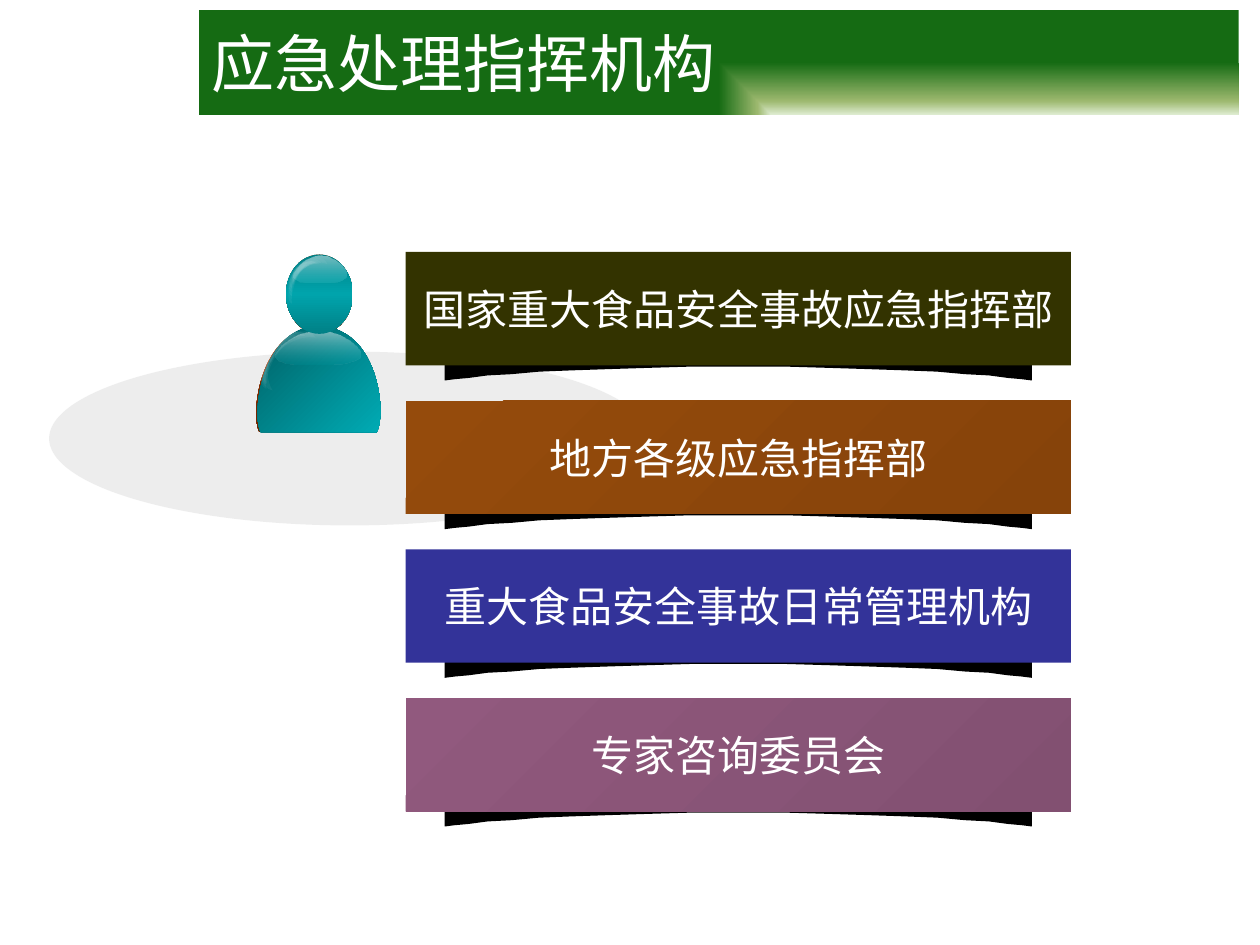
from lxml import etree
from pptx import Presentation
from pptx.dml.color import RGBColor
from pptx.enum.shapes import MSO_SHAPE
from pptx.enum.text import MSO_ANCHOR, PP_ALIGN
from pptx.oxml.ns import qn
from pptx.util import Inches, Pt

# Content: bar label and its fill stops (position, colour, modifiers)
TITLE = "应急处理指挥机构"
BARS = [
    ("国家重大食品安全事故应急指挥部", [(0, "333300", {})]),
    ("地方各级应急指挥部", [(0, "954B0C", {}), (100, "954B0C", {"shade": 78.43})]),
    ("重大食品安全事故日常管理机构", [(0, "333399", {})]),
    ("专家咨询委员会", [(0, "91597E", {}), (100, "91597E", {"shade": 78.43})]),
]

THEME = {
    "font": "Arial", "title_size": 36, "bar_size": 24, "text": "FFFFFF",
    "title": [(0, "DDEBCF", {}), (26, "9CB86E", {}), (100, "156B13", {})],
    "floor": [(0, "DDDDDD", {"alpha": 50})],
    "shadow": [(0, "000000", {})],
    "rim": [(0, "993300", {}), (100, "6D2400", {})],
    "body": [(0, "006065", {}), (100, "00ABB4", {})],
    "head": [(0, "008086", {}), (50, "00A4AC", {}), (100, "008086", {})],
    "body_gloss": [(0, "FFFFFF", {"alpha": 50}), (100, "009CA4", {"alpha": 18})],
    "head_gloss": [(0, "FFFFFF", {"alpha": 50}), (100, "59D3D9", {"alpha": 18})],
    "glint": [(0, "FFFFFF", {"alpha": 5})],
}

# Geometry in inches
BAR_LEFT, BAR_TOP, BAR_WIDTH, BAR_HEIGHT, BAR_PITCH = 3.22, 2, 5.28, 0.9, 1.18
HEAD = (2.27, 2.02, 0.53, 0.63)
# Right half of the curved shadow: offsets from the bar's centre and shadow's top
SHADOW_HALF = [
    (0, 0), (2.33, 0.11), (2.33, 0.43), (2.25, 0.42), (2.14, 0.41), (1.99, 0.39),
    (1.8, 0.38), (1.58, 0.36), (1.32, 0.35), (1.03, 0.34), (0.72, 0.33), (0.37, 0.32),
]
# Outline of a highlight, as fractions of its width and height
GLOSS = [
    (0.99, 0.6), (1, 0.72), (0.98, 0.8), (0.94, 0.86), (0.87, 0.92), (0.78, 0.97),
    (0.68, 0.99), (0.6, 1), (0.36, 1), (0.22, 0.99), (0.12, 0.95), (0.04, 0.88),
    (0, 0.77), (0.01, 0.64), (0.07, 0.45), (0.16, 0.28), (0.26, 0.14), (0.38, 0.05),
    (0.51, 0), (0.64, 0.04), (0.76, 0.14), (0.87, 0.3), (0.95, 0.47),
]
# Moon glints: left, top, width, height, rotation
GLINTS = [
    (2.42, 1.97, 0.09, 0.25, 250.7), (2.37, 1.99, 0.09, 0.26, 237.1),
    (2.36, 2.01, 0.09, 0.25, 232.1), (2.34, 2.02, 0.08, 0.28, 223.3),
    (2.35, 2.02, 0.09, 0.25, 228.1), (2.32, 2.04, 0.08, 0.28, 214.5),
    (2.31, 2.07, 0.08, 0.28, 209.6), (2.31, 2.06, 0.07, 0.35, 200.7),
    (2.23, 2.52, 0.13, 0.41, 240.4), (2.16, 2.55, 0.14, 0.4, 226.8),
    (2.16, 2.55, 0.12, 0.45, 221.9), (2.13, 2.6, 0.12, 0.45, 213),
    (2.12, 2.56, 0.12, 0.45, 217.8), (2.1, 2.6, 0.11, 0.45, 204.3),
    (2.08, 2.64, 0.11, 0.44, 199.3), (2.06, 2.71, 0.14, 0.38, 190.5),
]


def add_color(parent, color, modifiers):
    node = etree.SubElement(parent, qn("a:srgbClr"), val=color)
    for name, percent in modifiers.items():
        etree.SubElement(node, qn(f"a:{name}"), val=str(round(percent * 1000)))


def paint(shape, stops, angle=90, corner=False):
    """Fill with one colour, a linear gradient, or one growing from a corner."""
    shape.shadow.inherit = False
    shape.line.fill.background()
    shape.fill.solid()
    solid = shape._element.spPr.find(qn("a:solidFill"))
    if len(stops) == 1:
        add_color(solid, *stops[0][1:])
        return shape
    gradient = etree.Element(qn("a:gradFill"), rotWithShape="1")
    stop_list = etree.SubElement(gradient, qn("a:gsLst"))
    for position, color, modifiers in stops:
        stop = etree.SubElement(stop_list, qn("a:gs"), pos=str(position * 1000))
        add_color(stop, color, modifiers)
    if corner:
        route = etree.SubElement(gradient, qn("a:path"), path="rect")
        etree.SubElement(route, qn("a:fillToRect"), l="100000", t="100000")
    else:
        etree.SubElement(gradient, qn("a:lin"), ang=str(angle * 60000), scaled="0")
    solid.getparent().replace(solid, gradient)
    return shape


def add_preset(shapes, kind, place, stops, **options):
    shape = shapes.add_shape(kind, *map(Inches, place))
    return paint(shape, stops, **options)


def add_outline(shapes, points, stops, **options):
    corners = [(Inches(x), Inches(y)) for x, y in points]
    builder = shapes.build_freeform(*corners[0])
    builder.add_line_segments(corners[1:], close=True)
    return paint(builder.convert_to_shape(), stops, **options)


def write(shape, text, size, align, wrap):
    frame = shape.text_frame
    frame.word_wrap = wrap
    frame.vertical_anchor = MSO_ANCHOR.MIDDLE
    para = frame.paragraphs[0]
    para.text = text
    para.alignment = align
    para.font.name = THEME["font"]
    para.font.size = Pt(size)
    para.font.color.rgb = RGBColor.from_string(THEME["text"])


def bezier(start, control_1, control_2, end, steps=24):
    for step in range(steps + 1):
        t = step / steps
        weights = ((1 - t) ** 3, 3 * t * (1 - t) ** 2, 3 * t * t * (1 - t), t ** 3)
        yield tuple(sum(w * value for w, value in zip(weights, axis))
                    for axis in zip(start, control_1, control_2, end))


def shoulders(x, y):
    """Outline of the torso, with the neck at x, y."""
    left = bezier((x, y), (x - 0.47, y - 0.02), (x - 0.56, 3.29), (x - 0.48, 3.43))
    right = bezier((x + 0.44, 3.43), (x + 0.52, 3.29), (x + 0.46, y + 0.03), (x, y))
    return [*left, *right]


def add_gloss(shapes, left, top, width, height, stops):
    points = [(left + width * x, top + height * y) for x, y in GLOSS]
    add_outline(shapes, points, stops)


deck = Presentation()
deck.slide_width, deck.slide_height = Inches(10), Inches(7.5)
page = deck.slides.add_slide(deck.slide_layouts[6])

# Title band and floor ellipse
band = add_preset(page.shapes, MSO_SHAPE.RECTANGLE, (1.58, 0.08, 8.25, 0.83),
                  THEME["title"], corner=True)
write(band, TITLE, THEME["title_size"], PP_ALIGN.LEFT, True)
add_preset(page.shapes, MSO_SHAPE.OVAL, (0.39, 2.79, 4.77, 1.38), THEME["floor"])

# Bars, each over its curved shadow
center = BAR_LEFT + BAR_WIDTH / 2
for row, (label, stops) in enumerate(BARS):
    top = BAR_TOP + row * BAR_PITCH
    group = page.shapes.add_group_shape().shapes
    half = [(dx, top + 0.59 + dy) for dx, dy in SHADOW_HALF]
    curve = [(center + dx, y) for dx, y in half]
    curve += [(center - dx, y) for dx, y in reversed(half[1:])]
    add_outline(group, curve, THEME["shadow"])
    bar = add_preset(group, MSO_SHAPE.RECTANGLE,
                     (BAR_LEFT, top, BAR_WIDTH, BAR_HEIGHT), stops, angle=45)
    write(bar, label, THEME["bar_size"], PP_ALIGN.CENTER, False)

# Person: rim, torso, head, then highlights
person = page.shapes.add_group_shape().shapes
add_outline(person, shoulders(2.54, 2.6), THEME["rim"])
add_preset(person, MSO_SHAPE.OVAL, HEAD, THEME["rim"])
add_outline(person, shoulders(2.55, 2.59), THEME["body"], angle=45)
add_gloss(person, 2.19, 2.62, 0.67, 0.27, THEME["body_gloss"])
add_preset(person, MSO_SHAPE.OVAL, HEAD, THEME["head"])
add_gloss(person, 2.33, 2.03, 0.42, 0.21, THEME["head_gloss"])
for *place, rotation in GLINTS:
    moon = add_preset(person, MSO_SHAPE.MOON, place, THEME["glint"])
    moon.adjustments[0] = 0.5
    moon.rotation = rotation
    moon._element.spPr.find(qn("a:xfrm")).set("flipH", "1")

deck.save("out.pptx")
